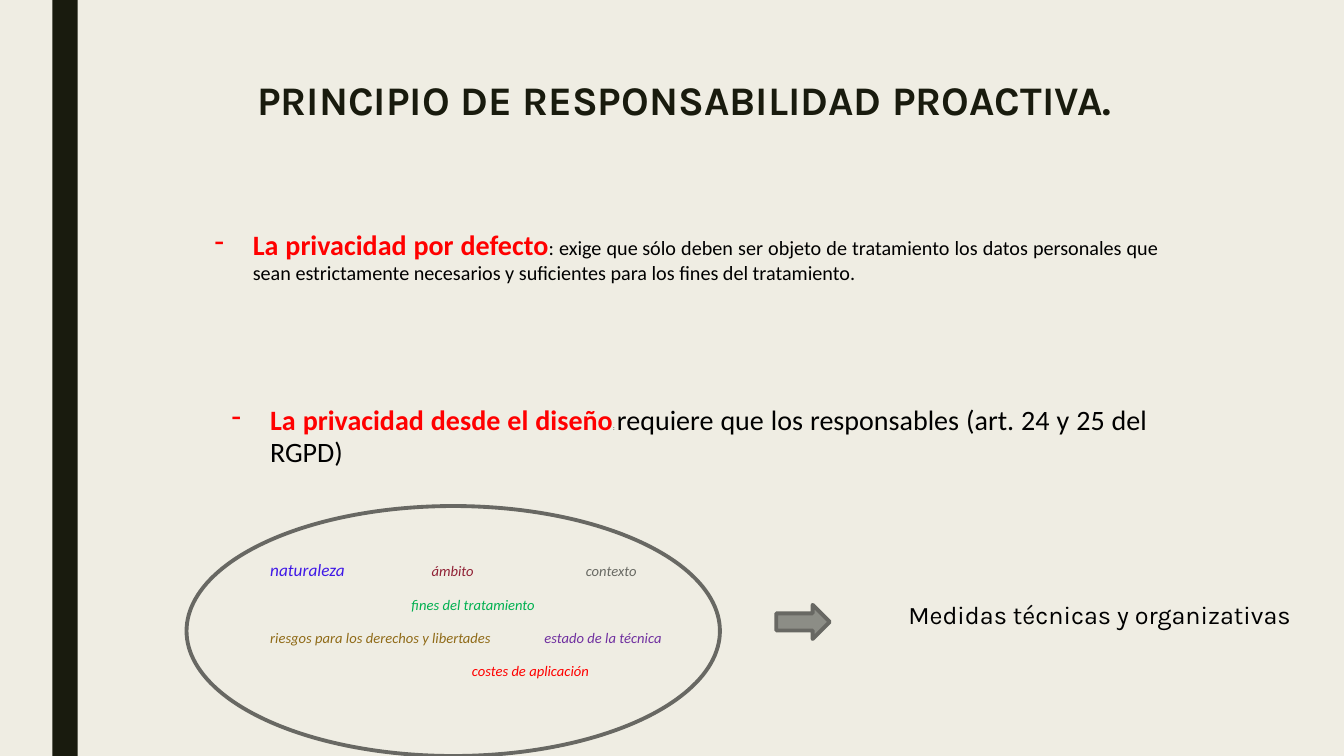
from lxml import etree
from pptx import Presentation
from pptx.dml.color import RGBColor
from pptx.enum.shapes import MSO_SHAPE
from pptx.enum.text import MSO_ANCHOR, PP_ALIGN
from pptx.oxml.ns import qn
from pptx.util import Inches, Pt

RECT, OVAL, ARROW = MSO_SHAPE.RECTANGLE, MSO_SHAPE.OVAL, MSO_SHAPE.RIGHT_ARROW
TOP = MSO_ANCHOR.TOP
CENTER, JUSTIFY = PP_ALIGN.CENTER, PP_ALIGN.JUSTIFY

HUES = {
    "paper": "EFEDE3", "ink": "191B0E", "black": "000000", "red": "FF0000",
    "line": "686863", "arrow": "8C8D86", "blue": "4019E7", "wine": "912236",
    "gray": "696A64", "green": "00B050", "ochre": "906B18", "violet": "7030A0",
}
BODY, HEAD = "Calibri", "Karla"


def hue(name):
    return RGBColor.from_string(HUES[name])


def add_run(para, text, size, color, font=BODY, bold=False, italic=False):
    run = para.add_run()
    run.text = text
    face = run.font
    face.name, face.size = font, Pt(size)
    face.bold, face.italic = bold, italic
    face.color.rgb = hue(color)


def add_shape(slide, kind, box, fill=None, line=None):
    shape = slide.shapes.add_shape(kind, *map(Inches, box))
    shape.shadow.inherit = False
    if fill:
        shape.fill.solid()
        shape.fill.fore_color.rgb = hue(fill)
    else:
        shape.fill.background()
    if line:
        shape.line.color.rgb = hue(line)
        shape.line.width = Pt(2.75)
    else:
        shape.line.fill.background()


def add_text(slide, box):
    frame = slide.shapes.add_textbox(*map(Inches, box)).text_frame
    frame.word_wrap = True
    return frame


def set_para(para, gap=0.95):
    para.alignment = JUSTIFY
    para.line_spacing = gap
    para.space_before = para.space_after = Pt(6)


def set_tabs(para, stops):
    tabs = etree.SubElement(para._p.get_or_add_pPr(), qn("a:tabLst"))
    for stop in stops:
        etree.SubElement(tabs, qn("a:tab"), pos=str(Inches(stop)), algn="l")


def add_title(slide, box):
    title = slide.shapes.title
    title.left, title.top, title.width, title.height = map(Inches, box)
    frame = title.text_frame
    frame.word_wrap = True
    frame.vertical_anchor = TOP
    para = frame.paragraphs[0]
    para.alignment = CENTER
    para.line_spacing = 0.89
    add_run(para, "PRINCIPIO DE RESPONSABILIDAD PROACTIVA.", 29, "ink", HEAD, True)


def add_point(slide, box, term, rest):
    para = add_text(slide, box).paragraphs[0]
    set_para(para)
    props = para._p.get_or_add_pPr()
    props.set("marL", str(Inches(0.95)))
    props.set("indent", str(Inches(-0.38)))
    etree.SubElement(props, qn("a:buChar"), char="-")
    add_run(para, term, 20, "red", bold=True)
    for text, size in rest:
        add_run(para, text, size, "black")


def add_factors(slide, box):
    left, top, width, height = box
    add_shape(slide, OVAL, box, line="line")
    frame = add_text(slide, (left + 0.83, top + 0.49, width - 1.1, height - 0.87))
    frame.margin_left = 0
    rows = [
        ([1.6, 3.13], [("naturaleza", 12.3, "blue"), ("\támbito", 10.4, "wine"),
                       ("\tcontexto", 10.4, "gray")]),
        ([1.4], [("\tfines del tratamiento", 10.4, "green")]),
        ([2.72], [("riesgos para los derechos y libertades", 10.4, "ochre"),
                  ("\testado de la técnica", 10.4, "violet")]),
        ([2.0], [("\tcostes de aplicación", 10.4, "red")]),
    ]
    for i, (stops, words) in enumerate(rows):
        para = frame.add_paragraph() if i else frame.paragraphs[0]
        set_para(para)
        set_tabs(para, stops)
        for text, size, color in words:
            add_run(para, text, size, color, italic=True)


def add_result(slide, box):
    left, top, width, height = box
    add_shape(slide, ARROW, (left, top + 0.15, 0.53, 0.34), "arrow", "line")
    frame = add_text(slide, (left + 1.21, top, width - 1.21, height))
    para = frame.paragraphs[0]
    set_para(para, 1.15)
    add_run(para, "Medidas técnicas y organizativas", 18, "black", HEAD)


def build(slide):
    slide.background.fill.solid()
    slide.background.fill.fore_color.rgb = hue("paper")
    add_shape(slide, RECT, (0.52, 0, 0.25, 7.5), "ink")
    add_title(slide, (1.59, 0.75, 10.41, 0.57))
    add_point(slide, (1.46, 2.23, 10.13, 0.96), "La privacidad por defecto", [
        (": exige que\u00a0sólo deben ser objeto de tratamiento los datos personales "
         "que sean estrictamente necesarios y suficientes para los fines del "
         "tratamiento.", 14.4)])
    add_point(slide, (1.63, 3.97, 9.85, 0.75), "La privacidad desde el diseño", [
        (": ", 4.5),
        ("requiere que los responsables (art. 24 y 25 del RGPD)", 20)])
    add_factors(slide, (1.85, 5.02, 5.29, 2.48))
    add_result(slide, (7.7, 5.85, 5.33, 0.42))


def main():
    deck = Presentation()
    deck.slide_width, deck.slide_height = Inches(13.33), Inches(7.5)
    build(deck.slides.add_slide(deck.slide_layouts[5]))
    deck.save("out.pptx")


if __name__ == "__main__":
    main()
